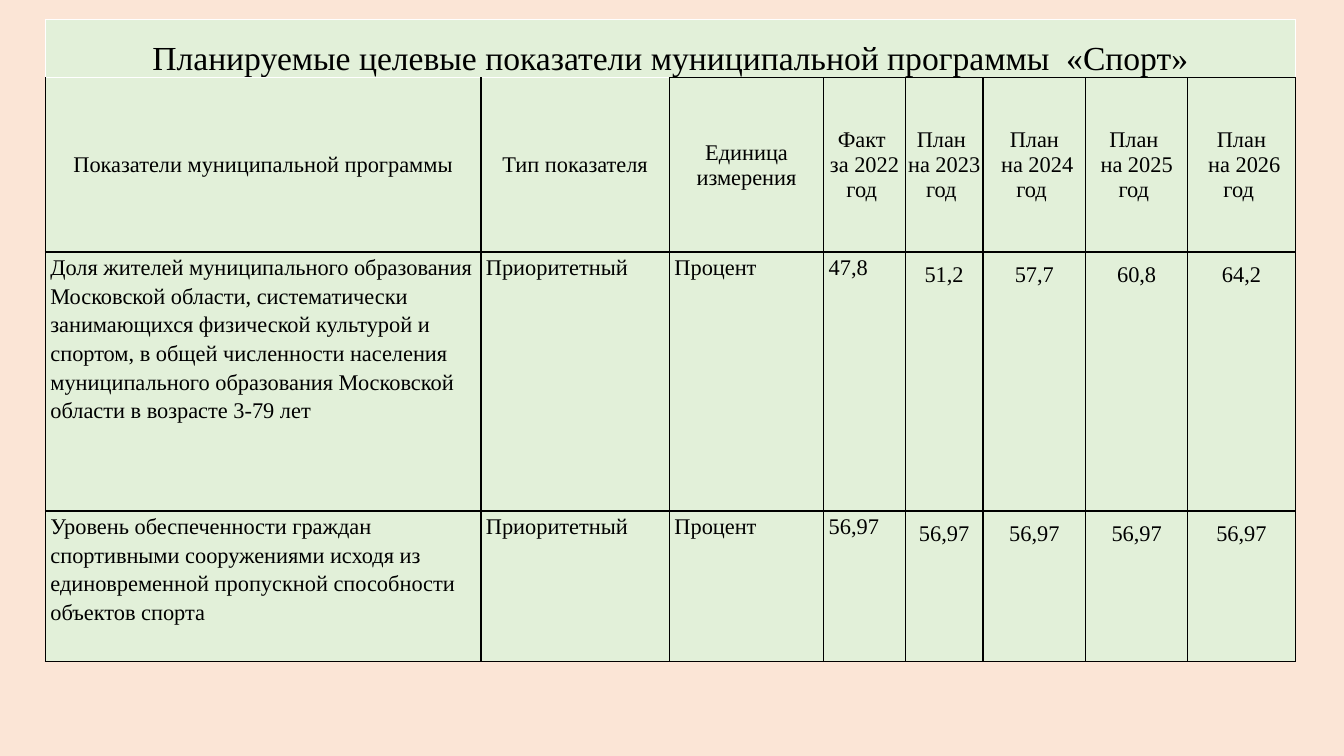
from lxml.etree import SubElement
from pptx import Presentation
from pptx.dml.color import RGBColor
from pptx.enum.text import MSO_ANCHOR, PP_ALIGN
from pptx.oxml.ns import qn
from pptx.util import Inches, Pt

TITLE = "Планируемые целевые показатели муниципальной программы  «Спорт»"
HEADERS = [
    "Показатели муниципальной программы",
    "Тип показателя",
    "Единица измерения",
    "Факт \nза 2022 год ",
    "План \nна 2023 год ",
    "План\n на 2024 год ",
    "План \nна 2025 год ",
    "План\n на 2026 год ",
]
INDICATORS = [
    ["Доля жителей муниципального образования Московской области, "
     "систематически занимающихся физической культурой и спортом, "
     "в общей численности населения муниципального образования "
     "Московской области в возрасте 3-79 лет",
     "Приоритетный", "Процент", "47,8", "51,2", "57,7", "60,8", "64,2"],
    ["Уровень обеспеченности граждан спортивными сооружениями исходя из "
     "единовременной пропускной способности объектов спорта",
     "Приоритетный", "Процент"] + ["56,97"] * 5,
]
COLUMN_WIDTHS = [4.32, 1.87, 1.53, 0.81, 0.77, 1.02, 1.01, 1.07]
ROW_HEIGHTS = [0.58, 1.73, 2.57, 1.49]
FIRST_PLAN_COLUMN = 4
WHITE_TOP_COLUMNS = 2
COLORS = {"background": "FBE5D6", "cell": "E2F0D9", "text": "000000",
          "line": "000000", "title_line": "FFFFFF"}
FONT = "Times New Roman"
HEADING_MARGINS = (0.01, 0.01, 0.01, 0)
LABEL_MARGINS = (0.05, 0, 0.05, 0)
PLAN_MARGINS = (0.04, 0.07, 0.04, 0.07)


def set_borders(cell, color, top_color):
    properties = cell._tc.get_or_add_tcPr()
    for position, side in enumerate(("lnL", "lnR", "lnT", "lnB")):
        line = SubElement(properties, qn(f"a:{side}"), w=str(Pt(1)))
        fill = SubElement(line, qn("a:solidFill"))
        SubElement(fill, qn("a:srgbClr"), val=top_color if side == "lnT" else color)
        properties.insert(position, line)


def fill_cell(cell, text, margins, anchor, alignment, size=16, spacing=None):
    cell.text = text
    cell.margin_left, cell.margin_top, cell.margin_right, cell.margin_bottom = map(Inches, margins)
    cell.vertical_anchor = anchor
    for paragraph in cell.text_frame.paragraphs:
        paragraph.alignment = alignment
        paragraph.line_spacing = spacing
        paragraph.font.name = FONT
        paragraph.font.size = Pt(size)
        paragraph.font.color.rgb = RGBColor.from_string(COLORS["text"])


def style_cell(cell, row, column):
    cell.fill.solid()
    cell.fill.fore_color.rgb = RGBColor.from_string(COLORS["cell"])
    color = COLORS["title_line" if row == 0 else "line"]
    white_top = row == 0 or (row == 1 and column < WHITE_TOP_COLUMNS)
    set_borders(cell, color, COLORS["title_line" if white_top else "line"])


def build_table(slide):
    table = slide.shapes.add_table(
        len(ROW_HEIGHTS), len(COLUMN_WIDTHS), Inches(0.45), Inches(0.19),
        Inches(sum(COLUMN_WIDTHS)), Inches(sum(ROW_HEIGHTS))).table
    table.first_row = False
    table.horz_banding = False
    for column, width in zip(table.columns, COLUMN_WIDTHS):
        column.width = Inches(width)
    for row, height in zip(table.rows, ROW_HEIGHTS):
        row.height = Inches(height)
    for row in range(len(ROW_HEIGHTS)):
        for column in range(len(COLUMN_WIDTHS)):
            style_cell(table.cell(row, column), row, column)

    title_cell = table.cell(0, 0)
    title_cell.merge(table.cell(0, len(COLUMN_WIDTHS) - 1))
    fill_cell(title_cell, TITLE, HEADING_MARGINS, MSO_ANCHOR.BOTTOM, PP_ALIGN.CENTER, 24)
    for column, header in enumerate(HEADERS):
        fill_cell(table.cell(1, column), header, HEADING_MARGINS,
                  MSO_ANCHOR.MIDDLE, PP_ALIGN.CENTER)
    for row, indicator in enumerate(INDICATORS, start=2):
        for column, text in enumerate(indicator):
            is_plan = column >= FIRST_PLAN_COLUMN
            fill_cell(table.cell(row, column), text,
                      PLAN_MARGINS if is_plan else LABEL_MARGINS, MSO_ANCHOR.TOP,
                      PP_ALIGN.CENTER if is_plan else PP_ALIGN.LEFT, spacing=1.15)


def main():
    presentation = Presentation()
    presentation.slide_width = Inches(13.33)
    presentation.slide_height = Inches(7.5)
    slide = presentation.slides.add_slide(presentation.slide_layouts[6])
    slide.background.fill.solid()
    slide.background.fill.fore_color.rgb = RGBColor.from_string(COLORS["background"])
    build_table(slide)
    presentation.save("out.pptx")


if __name__ == "__main__":
    main()
